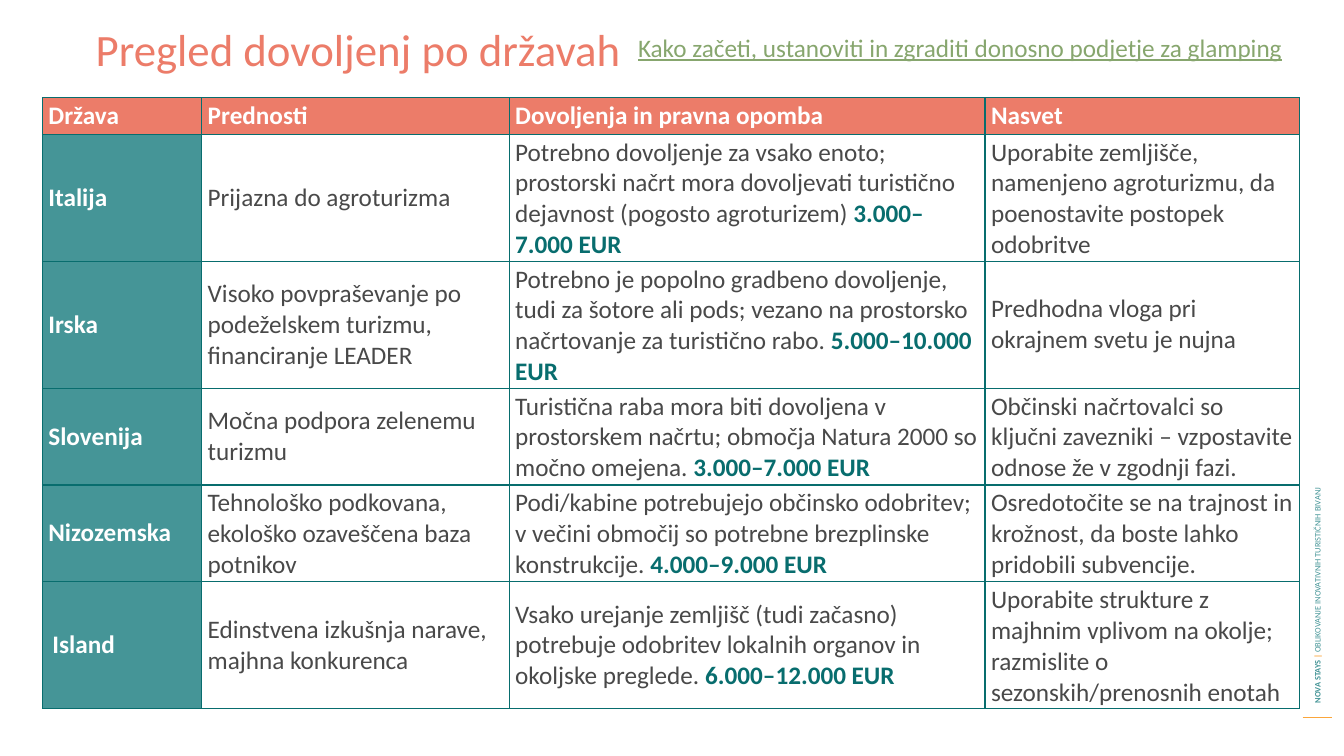
from lxml import etree
from pptx import Presentation
from pptx.dml.color import RGBColor
from pptx.enum.shapes import MSO_CONNECTOR
from pptx.enum.text import MSO_ANCHOR
from pptx.oxml.ns import qn
from pptx.util import Inches, Pt

FONT = "Calibri"
CORAL = RGBColor(0xEC, 0x7C, 0x69)
TEAL = RGBColor(0x45, 0x95, 0x97)
DARK_TEAL = RGBColor(0x08, 0x6D, 0x6E)
GREEN = RGBColor(0x87, 0xA6, 0x6E)
ORANGE = RGBColor(0xFB, 0xA6, 0x3B)
GRAY = RGBColor(0x49, 0x49, 0x49)
WHITE = RGBColor(0xFF, 0xFF, 0xFF)

COLUMN_WIDTHS = [1.58, 3.05, 4.72, 3.12]
ROW_HEIGHTS = [0.35, 1.25, 1.25, 0.96, 0.96, 1.25]
HEADERS = ["Država", "Prednosti", "Dovoljenja in pravna opomba", "Nasvet"]
# Country, advantages, permits, cost, advice
COUNTRIES = [
    ("Italija", "Prijazna do agroturizma",
     "Potrebno dovoljenje za vsako enoto; prostorski načrt mora dovoljevati "
     "turistično dejavnost (pogosto agroturizem)", "3.000–7.000 EUR",
     "Uporabite zemljišče, namenjeno agroturizmu, da poenostavite postopek odobritve"),
    ("Irska", "Visoko povpraševanje po podeželskem turizmu, financiranje LEADER",
     "Potrebno je popolno gradbeno dovoljenje, tudi za šotore ali pods; vezano na "
     "prostorsko načrtovanje za turistično rabo.", "5.000–10.000 EUR",
     "Predhodna vloga pri okrajnem svetu je nujna"),
    ("Slovenija", "Močna podpora zelenemu turizmu",
     "Turistična raba mora biti dovoljena v prostorskem načrtu; območja "
     "Natura 2000 so močno omejena.", "3.000–7.000 EUR",
     "Občinski načrtovalci so ključni zavezniki – vzpostavite odnose že v zgodnji fazi."),
    ("Nizozemska", "Tehnološko podkovana, ekološko ozaveščena baza potnikov",
     "Podi/kabine potrebujejo občinsko odobritev; v večini območij so potrebne "
     "brezplinske konstrukcije.", "4.000–9.000 EUR",
     "Osredotočite se na trajnost in krožnost, da boste lahko pridobili subvencije."),
    ("Island", "Edinstvena izkušnja narave, majhna konkurenca",
     "Vsako urejanje zemljišč (tudi začasno) potrebuje odobritev lokalnih organov "
     "in okoljske preglede.", "6.000–12.000 EUR",
     "Uporabite strukture z majhnim vplivom na okolje; razmislite o "
     "sezonskih/prenosnih enotah"),
]


def add_run(paragraph, text, size, color, bold=False, underline=False):
    run = paragraph.add_run()
    run.text = text
    font = run.font
    font.name, font.size, font.bold = FONT, Pt(size), bold
    font.color.rgb = color
    if underline:
        font.underline = True


def add_text(slide, left, top, width, height, runs, anchor=MSO_ANCHOR.TOP):
    """Add a one-paragraph text box; each run is a tuple of add_run arguments."""
    box = slide.shapes.add_textbox(Inches(left), Inches(top), Inches(width), Inches(height))
    frame = box.text_frame
    frame.word_wrap = True
    frame.vertical_anchor = anchor
    for run in runs:
        add_run(frame.paragraphs[0], *run)
    return box


def add_footer_line(slide):
    line = slide.shapes.add_connector(
        MSO_CONNECTOR.STRAIGHT, Inches(12.92), Inches(7.12), Inches(13.21), Inches(7.12))
    line.line.color.rgb = ORANGE
    line.line.width = Pt(0.75)
    etree.SubElement(line._element.spPr, qn("a:effectLst"))


def set_borders(cell, color, width):
    properties = cell._tc.get_or_add_tcPr()
    for index, side in enumerate(("lnL", "lnR", "lnT", "lnB")):
        border = etree.Element(qn(f"a:{side}"), w=str(Pt(width)))
        fill = etree.SubElement(border, qn("a:solidFill"))
        etree.SubElement(fill, qn("a:srgbClr"), val=str(color))
        properties.insert(index, border)


def fill_cell(cell, runs, fill=None, margin=0.06):
    cell.vertical_anchor = MSO_ANCHOR.MIDDLE
    cell.margin_left = cell.margin_right = Inches(margin)
    cell.margin_top = cell.margin_bottom = Inches(margin / 2)
    if fill is None:
        cell.fill.background()
    else:
        cell.fill.solid()
        cell.fill.fore_color.rgb = fill
    set_borders(cell, DARK_TEAL, 1)
    for text, color, bold in runs:
        add_run(cell.text_frame.paragraphs[0], text, 18, color, bold)


def add_permit_table(slide):
    table = slide.shapes.add_table(
        len(ROW_HEIGHTS), len(COLUMN_WIDTHS), Inches(0.42), Inches(0.97),
        Inches(sum(COLUMN_WIDTHS)), Inches(sum(ROW_HEIGHTS))).table
    for column, width in zip(table.columns, COLUMN_WIDTHS):
        column.width = Inches(width)
    for row, height in zip(table.rows, ROW_HEIGHTS):
        row.height = Inches(height)
    for index, header in enumerate(HEADERS):
        fill_cell(table.cell(0, index), [(header, WHITE, True)], CORAL)
    for row, (country, advantages, permits, cost, advice) in enumerate(COUNTRIES, 1):
        country_margin = 0.1 if country == "Island" else 0.06
        fill_cell(table.cell(row, 0), [(country, WHITE, True)], TEAL, country_margin)
        fill_cell(table.cell(row, 1), [(advantages, GRAY, False)])
        fill_cell(table.cell(row, 2),
                  [(permits, GRAY, False), (f" {cost}", DARK_TEAL, True)])
        fill_cell(table.cell(row, 3), [(advice, GRAY, False)])


def main():
    presentation = Presentation()
    presentation.slide_width = Inches(13.33)
    presentation.slide_height = Inches(7.5)
    slide = presentation.slides.add_slide(presentation.slide_layouts[6])

    add_footer_line(slide)
    side_label = add_text(slide, 10.18, 4.09, 5.77, 0.2, [
        ("NOVA STAYS ", 6, TEAL, True),
        ("| ", 6, ORANGE, True),
        ("OBLIKOVANJE INOVATIVNIH TURISTIČNIH BIVANJ", 6, TEAL),
    ], MSO_ANCHOR.MIDDLE)
    side_label.rotation = 270
    add_text(slide, 0.85, 0.17, 11.61, 0.88, [("Pregled dovoljenj po državah", 32, CORAL)])
    add_text(slide, 6.23, 0.27, 6.9, 0.4, [
        ("Kako začeti, ustanoviti in zgraditi donosno podjetje za glamping",
         18, GREEN, False, True)])
    add_permit_table(slide)

    presentation.save("out.pptx")


if __name__ == "__main__":
    main()
